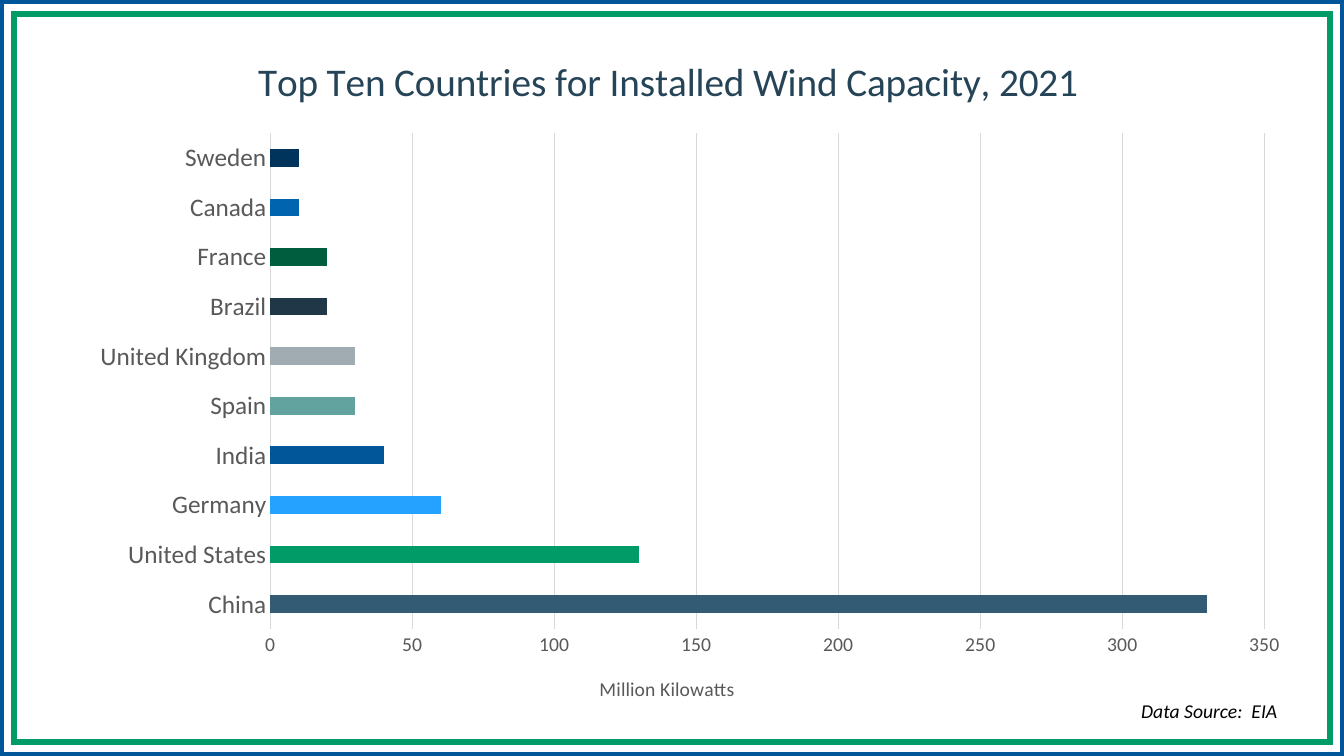
from dataclasses import dataclass

from lxml import etree
from pptx import Presentation
from pptx.chart.data import CategoryChartData
from pptx.dml.color import RGBColor
from pptx.enum.chart import XL_CHART_TYPE as Kind, XL_TICK_MARK as Tick
from pptx.enum.shapes import MSO_SHAPE as Shape
from pptx.oxml.ns import qn
from pptx.util import Inches, Pt

FONT = "Calibri"
WIDE, HIGH = 12.65, 6.89  # chart size in inches
BLACK = RGBColor(0x00, 0x00, 0x00)
GRAY = RGBColor(0x59, 0x59, 0x59)
PALE = RGBColor(0xD9, 0xD9, 0xD9)
SLATE = RGBColor(0x26, 0x44, 0x57)
STEEL = RGBColor(0x33, 0x5B, 0x74)
GREEN = RGBColor(0x00, 0x9B, 0x67)
SKY = RGBColor(0x25, 0xA2, 0xFF)
BLUE = RGBColor(0x00, 0x56, 0x99)
TEAL = RGBColor(0x62, 0xA3, 0x9F)
SILVER = RGBColor(0xA1, 0xAC, 0xB2)
INK = RGBColor(0x1F, 0x37, 0x46)
FOREST = RGBColor(0x00, 0x5D, 0x3E)
AZURE = RGBColor(0x00, 0x64, 0xAF)
NAVY = RGBColor(0x00, 0x34, 0x5C)


@dataclass
class Frame:
    inset: float
    color: RGBColor
    weight: float


@dataclass
class Country:
    name: str
    power: int
    color: RGBColor


FRAMES = [Frame(0, BLUE, 6), Frame(0.14, GREEN, 4.5)]
COUNTRIES = [
    Country("China", 330, STEEL),
    Country("United States", 130, GREEN),
    Country("Germany", 60, SKY),
    Country("India", 40, BLUE),
    Country("Spain", 30, TEAL),
    Country("United Kingdom", 30, SILVER),
    Country("Brazil", 20, INK),
    Country("France", 20, FOREST),
    Country("Canada", 10, AZURE),
    Country("Sweden", 10, NAVY),
]


def style(font, size: float, color: RGBColor) -> None:
    font.name = FONT
    font.size = Pt(size)
    font.color.rgb = color
    font.bold = False


def place(parent, index: int, **spots: float) -> None:
    """Fix a chart part, in inches from the chart's corner."""
    for old in parent.findall(qn("c:layout")):
        parent.remove(old)
    layout = etree.Element(qn("c:layout"))
    manual = etree.SubElement(layout, qn("c:manualLayout"))
    if "w" in spots:
        etree.SubElement(manual, qn("c:layoutTarget")).set("val", "inner")
    for key in ("x", "y"):
        etree.SubElement(manual, qn(f"c:{key}Mode")).set("val", "edge")
    for key, value in spots.items():
        part = value / (WIDE if key in "xw" else HIGH)
        etree.SubElement(manual, qn(f"c:{key}")).set("val", str(part))
    parent.insert(index, layout)


def entitle(owner, text: str, size: float, color: RGBColor,
            x: float, y: float) -> None:
    owner.has_title = True
    title = getattr(owner, "chart_title", None) or owner.axis_title
    title.text_frame.text = text
    style(title.text_frame.paragraphs[0].runs[0].font, size, color)
    place(title._element, 1, x=x, y=y)


def draw_frame(slide, frame: Frame) -> None:
    edge = Inches(frame.inset)
    box = slide.shapes.add_shape(Shape.RECTANGLE, edge, edge,
                                 Inches(13.33) - 2 * edge,
                                 Inches(7.5) - 2 * edge)
    box.shadow.inherit = False
    box.fill.background()
    box.line.color.rgb = frame.color
    box.line.width = Pt(frame.weight)
    stroke = box._element.spPr.find(qn("a:ln"))
    etree.SubElement(stroke, qn("a:miter")).set("lim", "800000")


def draw_chart(slide) -> None:
    data = CategoryChartData(number_format="General")
    data.categories = [land.name for land in COUNTRIES]
    data.add_series("Series 1", [land.power for land in COUNTRIES])
    chart = slide.shapes.add_chart(Kind.BAR_CLUSTERED, Inches(0.3), Inches(0.28),
                                   Inches(WIDE), Inches(HIGH), data).chart
    style(chart.font, 10, BLACK)
    chart.has_legend = False
    entitle(chart, "Top Ten Countries for Installed Wind Capacity, 2021",
            28, SLATE, 2.19, 0.2)
    place(chart._chartSpace.chart.plotArea, 0, x=2.38, y=1.04, w=9.86, h=4.92)

    # Bars, one colour per country
    plot = chart.plots[0]
    plot.gap_width = 182
    plot.vary_by_categories = False
    for index, land in enumerate(COUNTRIES):
        fill = plot.series[0].points[index].format.fill
        fill.solid()
        fill.fore_color.rgb = land.color

    # Axes
    lands, scale = chart.category_axis, chart.value_axis
    for axis, size in ((lands, 18), (scale, 14)):
        axis.major_tick_mark = axis.minor_tick_mark = Tick.NONE
        style(axis.tick_labels.font, size, GRAY)
    lands.has_major_gridlines = False
    scale.has_major_gridlines = True
    for line in (lands.format.line, scale.major_gridlines.format.line):
        line.color.rgb = PALE
        line.width = Pt(0.75)
    scale.format.line.fill.background()
    scale.minimum_scale, scale.maximum_scale, scale.major_unit = 0, 350, 50
    entitle(scale, "Million Kilowatts", 14, GRAY, 5.61, 6.38)


def draw_credit(slide) -> None:
    box = slide.shapes.add_textbox(Inches(11.22), Inches(6.88),
                                   Inches(2), Inches(0.34))
    box.text_frame.word_wrap = True
    box.text_frame.text = "Data Source:  EIA"
    font = box.text_frame.paragraphs[0].runs[0].font
    style(font, 14, BLACK)
    font.italic = True


def main() -> None:
    deck = Presentation()
    deck.slide_width, deck.slide_height = Inches(13.33), Inches(7.5)
    slide = deck.slides.add_slide(deck.slide_layouts[6])
    for frame in FRAMES:
        draw_frame(slide, frame)
    draw_chart(slide)
    draw_credit(slide)
    deck.save("out.pptx")


if __name__ == "__main__":
    main()
